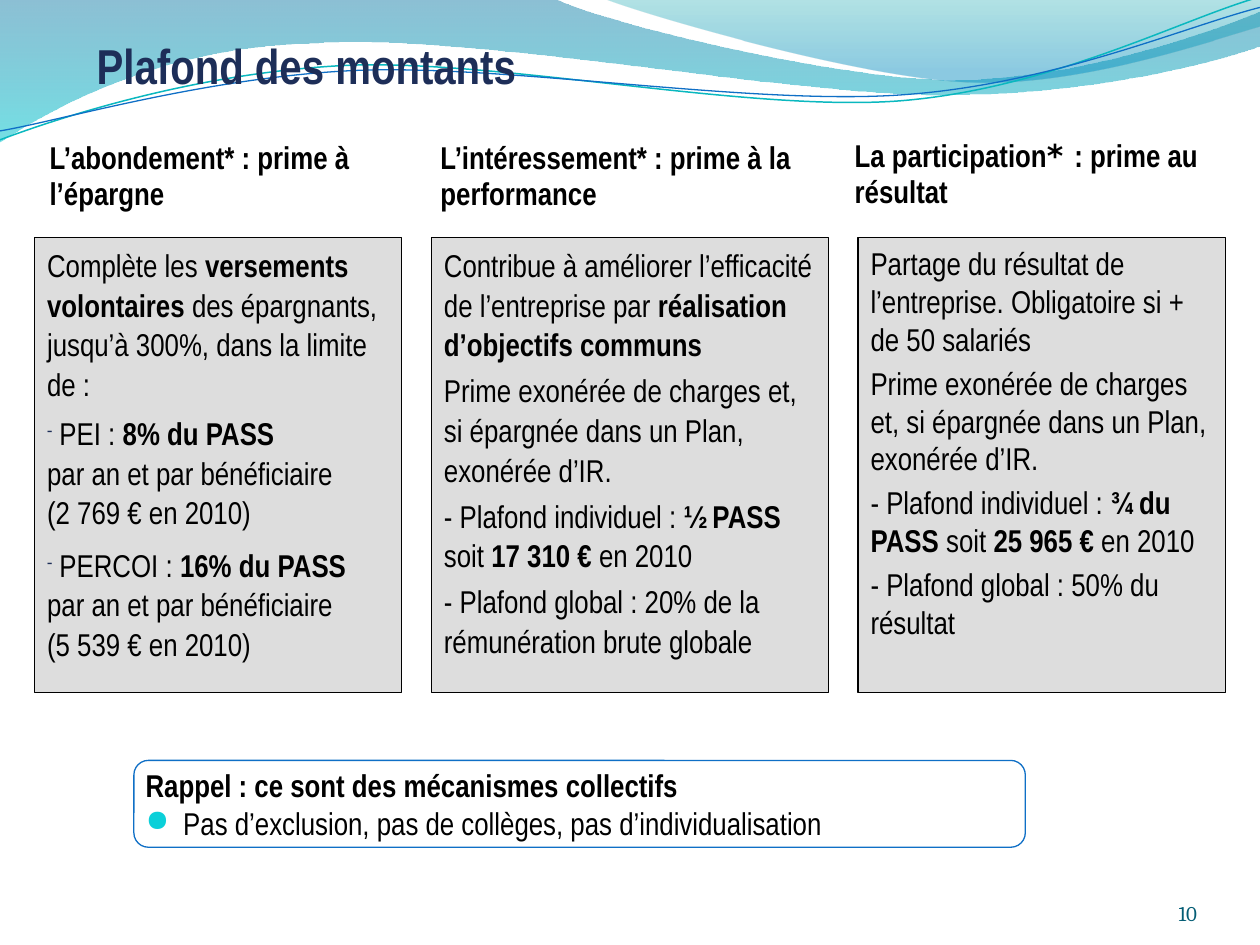
from lxml.etree import SubElement
from pptx import Presentation
from pptx.dml.color import RGBColor
from pptx.enum.shapes import MSO_SHAPE as Shape
from pptx.enum.text import MSO_ANCHOR as Anchor, PP_ALIGN as Align
from pptx.oxml.ns import qn
from pptx.util import Cm, Pt

BLACK = RGBColor(0x00, 0x00, 0x00)
GREY = RGBColor(0xDD, 0xDD, 0xDD)
NAVY = RGBColor(0x1D, 0x2E, 0x58)
BLUE = RGBColor(0x0F, 0x6F, 0xC6)
TEAL = RGBColor(0x0A, 0xB8, 0xBF)
CYAN = RGBColor(0x0B, 0xD0, 0xD9)
PETROL = RGBColor(0x04, 0x5D, 0x75)
DEEP_BLUE = RGBColor(0x00, 0x74, 0xA1)
AQUA = RGBColor(0x00, 0xC6, 0xCF)
SEA = RGBColor(0x00, 0xA1, 0xA9)
SKY = RGBColor(0x00, 0x8B, 0xBF)

BODY = {"name": "Arial Narrow", "size": Pt(18), "color": BLACK, "bold": False}
STRONG = {**BODY, "bold": True}
TITLE = {**STRONG, "size": Pt(28), "color": NAVY}
NUMBER = {**BODY, "name": "Cambria", "size": Pt(12), "color": PETROL}
DASH = ("-", NAVY, 50)
DOT = ("●", CYAN, 95)

# Outlines in cm: a pair is a straight step, six numbers are a Bézier curve.
WAVES = [
    ([(0, 0), (11.18, -0.03), (12.09, 0.43, 16.87, 1.6, 19.25, 1.6),
      (21.67, 1.6, 24.33, 0.66, 25.4, 0.23), (25.43, 0.91),
      (24.97, 1.12, 22.1, 1.93, 18.95, 1.91), (15.8, 1.91, 9.7, 0.71, 6.53, 0.86),
      (3.28, 0.91, 1.17, 2.11, -0.03, 2.87), (0, 0)],
     [(0, DEEP_BLUE, 45), (1, AQUA, 55)]),
    ([(12.17, -0.03), (12.93, 0.28, 17.32, 1.57, 19.53, 1.65),
      (21.74, 1.75, 24.41, 0.81, 25.4, 0.53), (25.4, 0), (12.17, -0.03)],
     [(0, SEA, 30), (0.8, SKY, 45)]),
]
STRAND_ANGLE = -2.7
STRANDS = [
    ([(-0.05, 2.22), (1.19, 1.82, 4.02, 1.04, 7.05, 1.05),
      (10.05, 1.07, 15.02, 2.37, 18.08, 2.29),
      (21.13, 2.2, 23.87, 0.91, 25.41, 0.55)], TEAL, 0.85),
    ([(-0.04, 2.04), (1.16, 1.9, 4.18, 1.15, 7.2, 1.16),
      (10.25, 1.18, 15.13, 2.25, 18.18, 2.17),
      (21.21, 2.1, 23.93, 1.06, 25.45, 0.75)], BLUE, 0.75),
]

# Heading, its place, box left and width, line spacing, and (text, space before, bullet).
EXEMPTION = ("Prime exonérée de charges et, si épargnée dans un Plan, exonérée d’IR.", 3.6, None)
COLUMNS = [
    ("L’abondement* : prime à l’épargne", (0.82, 2.5, 7.21), (0.7, 7.4), 1.05, [
        ("Complète les |versements volontaires| des épargnants, "
         "jusqu’à 300%, dans la limite de :", 3.6, None),
        (" PEI : |8% du PASS \n|par an et par bénéficiaire", 5.4, DASH),
        ("(2 769 € en 2010)", 0, None),
        (" PERCOI : |16% du PASS|\npar an et par bénéficiaire \n(5 539 € en 2010)", 7.2, DASH)]),
    ("L’intéressement* : prime à la performance", (8.7, 2.5, 8.2), (8.7, 8), 1.05, [
        ("Contribue à améliorer l’efficacité de l’entreprise par "
         "|réalisation d’objectifs communs", 3.6, None),
        EXEMPTION,
        ("- Plafond individuel : |½ PASS| soit |17 310 €| en 2010", 3.6, None),
        ("- Plafond global : 20% de la rémunération brute globale", 3.6, None)]),
    ("La participation|* |: prime au résultat", (17.05, 2.46, 7.59), (17.3, 7.4), 1, [
        ("Partage du résultat de l’entreprise. Obligatoire si + de 50 salariés", 3.6, None),
        EXEMPTION,
        ("- Plafond individuel : |¾ du PASS| soit |25 965 €| en 2010", 3.6, None),
        ("- Plafond global : 50% du résultat", 3.6, None)]),
]


def add_outline(s, outline, close):
    """Build a freeform on the outline's frame, then give its path true curves."""
    xs = [x for step in outline for x in step[::2]]
    ys = [y for step in outline for y in step[1::2]]
    left, top = Cm(min(xs)), Cm(min(ys))
    builder = s.shapes.build_freeform(left, top)
    builder.add_line_segments([(Cm(max(xs)), Cm(max(ys)))], close=False)
    sp = builder.convert_to_shape()
    sp.shadow.inherit = False
    path = next(sp._element.iter(qn("a:path")))
    for child in list(path):
        path.remove(child)
    for i, step in enumerate(outline):
        tag = "a:cubicBezTo" if len(step) == 6 else "a:lnTo" if i else "a:moveTo"
        command = SubElement(path, qn(tag))
        for x, y in zip(step[::2], step[1::2]):
            SubElement(command, qn("a:pt"), x=str(Cm(x) - left), y=str(Cm(y) - top))
    if close:
        SubElement(path, qn("a:close"))
    return sp


def add_wave(s, outline, stops):
    sp = add_outline(s, outline, True)
    sp.line.fill.background()
    sp.fill.gradient()
    sp.fill.gradient_angle = 270
    for stop, (position, color, _) in zip(sp.fill.gradient_stops, stops):
        stop.position = position
        stop.color.rgb = color
    colors = sp._element.spPr.iter(qn("a:srgbClr"))
    for clr, (_, _, opacity) in zip(list(colors), stops):
        SubElement(clr, qn("a:alpha"), val=str(opacity * 1000))


def set_line(sp, color, width):
    sp.line.color.rgb = color
    sp.line.width = Pt(width)


def add_strand(s, outline, color, width):
    sp = add_outline(s, outline, False)
    sp.rotation = STRAND_ANGLE
    sp.fill.background()
    set_line(sp, color, width)


def set_frame(sp, insets=(0.25, 0.13), anchor=Anchor.TOP):
    side, top = map(Cm, insets)
    values = {"word_wrap": True, "vertical_anchor": anchor, "margin_left": side,
              "margin_right": side, "margin_top": top, "margin_bottom": top}
    for name, value in values.items():
        setattr(sp.text_frame, name, value)
    return sp.text_frame


def add_text(p, text, fmt, accent=None):
    """Write text; stretches between bars take the accent format, newlines break."""
    for i, part in enumerate(text.split("|")):
        for j, piece in enumerate(part.split("\n")):
            if j:
                p.add_line_break()
            if not piece:
                continue
            r = p.add_run()
            r.text = piece
            for name, value in (accent if i % 2 else fmt).items():
                if name == "color":
                    r.font.color.rgb = value
                else:
                    setattr(r.font, name, value)


def set_paragraph(p, align=Align.LEFT, spacing=1, before=0, bullet=None, hang=0):
    values = {"alignment": align, "line_spacing": spacing, "space_before": Pt(before)}
    for name, value in values.items():
        setattr(p, name, value)
    pPr = p._p.get_or_add_pPr()
    pPr.set("marL", str(Cm(hang)))
    pPr.set("indent", str(-Cm(hang)))
    if bullet:
        char, color, percent = bullet
        SubElement(SubElement(pPr, qn("a:buClr")), qn("a:srgbClr"), val=str(color))
        SubElement(pPr, qn("a:buSzPct"), val=str(percent * 1000))
        SubElement(pPr, qn("a:buChar"), char=char)


def add_label(s, place, text, fmt, accent=None, insets=(0.25, 0.13), anchor=Anchor.TOP, **layout):
    p = set_frame(s.shapes.add_textbox(*map(Cm, place)), insets, anchor).paragraphs[0]
    set_paragraph(p, **layout)
    add_text(p, text, fmt, accent)


def add_panel(s, kind, place, fill, line, items, insets=(0.25, 0.13), spacing=1, hang=0):
    """Add an outlined shape with items of (text, format, space before, bullet)."""
    sp = s.shapes.add_shape(kind, *map(Cm, place))
    sp.shadow.inherit = False
    if fill is None:
        sp.fill.background()
    else:
        sp.fill.solid()
        sp.fill.fore_color.rgb = fill
    set_line(sp, line, 0.75)
    tf = set_frame(sp, insets)
    for i, (text, fmt, before, bullet) in enumerate(items):
        p = tf.add_paragraph() if i else tf.paragraphs[0]
        set_paragraph(p, spacing=spacing, before=before, bullet=bullet, hang=hang)
        add_text(p, text, fmt, STRONG)


def main():
    prs = Presentation()
    prs.slide_width, prs.slide_height = Cm(25.4), Cm(19.05)
    s = prs.slides.add_slide(prs.slide_layouts[6])
    for wave in WAVES:
        add_wave(s, *wave)
    for strand in STRANDS:
        add_strand(s, *strand)
    reminder = [("Rappel : ce sont des mécanismes collectifs", STRONG, 0, None),
                ("Pas d’exclusion, pas de collèges, pas d’individualisation", BODY, 0, DOT)]
    add_panel(s, Shape.ROUNDED_RECTANGLE, (2.7, 15.33, 17.97, 1.75), None, BLUE,
              reminder, insets=(0.15, 0.03), hang=0.76)
    add_label(s, (22.02, 17.65, 2.11, 1.02), "10", NUMBER, insets=(0, 0),
              anchor=Anchor.BOTTOM, align=Align.RIGHT)
    for heading, place, (left, width), spacing, body in COLUMNS:
        add_label(s, (*place, 2.11), heading, STRONG, {**STRONG, "name": "DejaVu Sans"},
                  insets=(0.18, 0.1), anchor=Anchor.MIDDLE, spacing=0.95, before=9)
        items = [(text, BODY, before, bullet) for text, before, bullet in body]
        add_panel(s, Shape.RECTANGLE, (left, 4.79, width, 9.17), GREY, BLACK, items,
                  spacing=spacing)
    add_label(s, (1.7, 0.58, 22, 1.93), "Plafond des montants", TITLE)
    prs.save("out.pptx")


if __name__ == "__main__":
    main()
